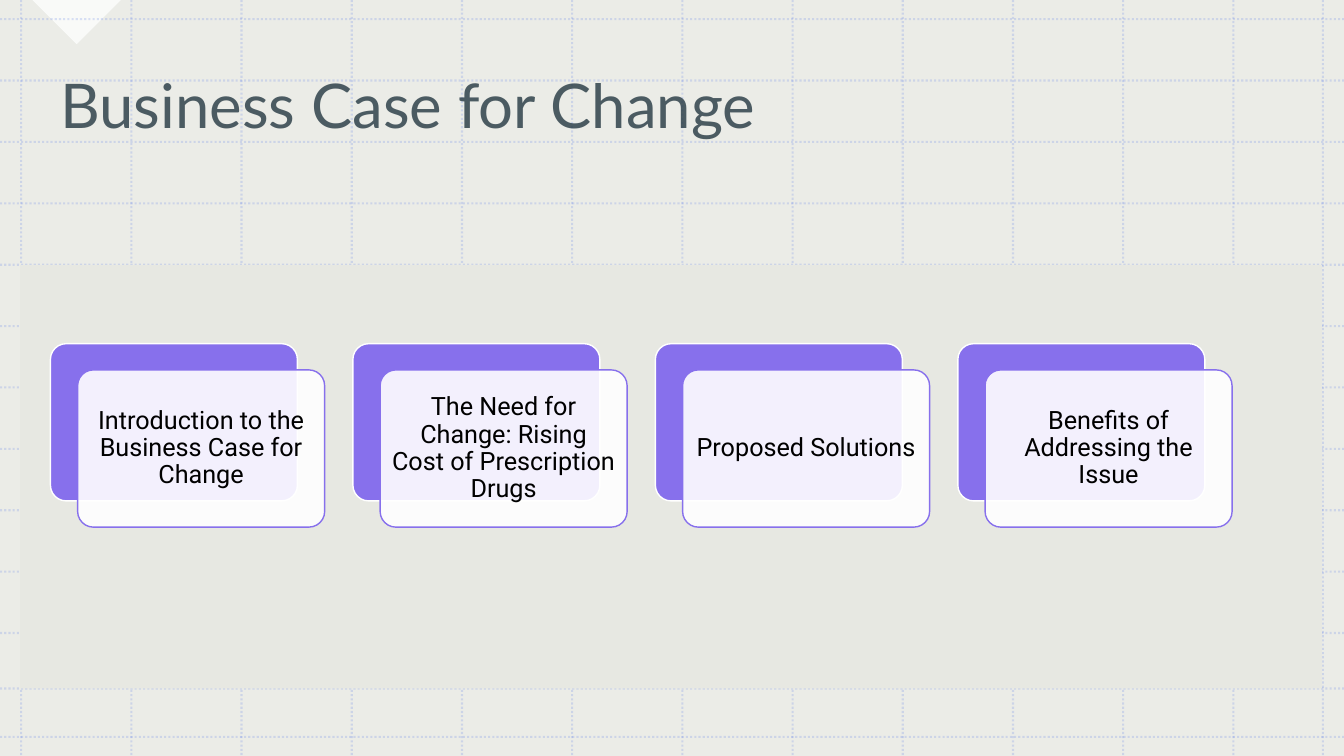
import pptx
import pptx.util
import pptx.dml.color
import pptx.enum.dml
import pptx.enum.shapes
import pptx.enum.text
import pptx.oxml
import pptx.oxml.ns
import lxml.etree

Inches = pptx.util.Inches
SHAPES = pptx.enum.shapes.MSO_SHAPE
ALIGN = pptx.enum.text.PP_ALIGN

# Content
TITLE = "Business Case for Change"
TOPICS = [
    "Introduction to the Business Case for Change",
    "The Need for Change: Rising Cost of Prescription Drugs",
    "Proposed Solutions",
    "Benefits of Addressing the Issue",
]
COLOURS = {
    "white": "FFFFFF",
    "stone": "E7E8E2",
    "grid": "5174E8",
    "title": "243741",
    "violet": "8770EC",
    "black": "000000",
}

# Layout, in inches
WIDTH, HEIGHT = 13.33, 7.5
GRID_COLUMNS = [0.21 + 1.093 * i for i in range(12)] + [13.12]
GRID_ROWS = [0.19 + 0.609 * i for i in range(11)] + [6.83, 7.31]
CARD_LEFT, CARD_TOP, CARD_STEP = 0.5, 3.41, 3.0
CARD_WIDTH, CARD_HEIGHT = 2.45, 1.56
CARD_SHIFT = 0.27
TEXT_MARGIN = 0.045


def paint(colour_format, name, opacity=100):
    """Set a solid colour, with its opacity in percent."""
    colour_format.rgb = pptx.dml.color.RGBColor.from_string(COLOURS[name])


def set_opacity(fill_owner, opacity):
    """Add an alpha value to the first solid colour below an element."""
    if opacity < 100:
        colour = next(fill_owner.iter(pptx.oxml.ns.qn("a:srgbClr")))
        alpha = lxml.etree.SubElement(colour, pptx.oxml.ns.qn("a:alpha"))
        alpha.set("val", str(opacity * 1000))


def add_block(page, kind, left, top, width, height, fill, opacity=100, line=None):
    block = page.shapes.add_shape(
        kind, Inches(left), Inches(top), Inches(width), Inches(height))
    block.shadow.inherit = False
    block.fill.solid()
    paint(block.fill.fore_color, fill)
    set_opacity(block.fill._xPr, opacity)
    if line:
        paint(block.line.color, line)
        block.line.width = pptx.util.Pt(1)
    else:
        block.line.fill.background()
    return block


def add_grid_line(page, x1, y1, x2, y2):
    rule = page.shapes.add_connector(
        pptx.enum.shapes.MSO_CONNECTOR.STRAIGHT,
        Inches(x1), Inches(y1), Inches(x2), Inches(y2))
    paint(rule.line.color, "grid")
    rule.line.width = pptx.util.Pt(1.5)
    rule.line.dash_style = pptx.enum.dml.MSO_LINE.ROUND_DOT
    properties = rule._element.spPr
    set_opacity(properties, 20)
    lxml.etree.SubElement(properties, pptx.oxml.ns.qn("a:effectLst"))


def add_text(page, text, left, top, width, height, font, size, colour,
             align=ALIGN.LEFT, inset=None, opacity=100):
    box = page.shapes.add_textbox(
        Inches(left), Inches(top), Inches(width), Inches(height))
    frame = box.text_frame
    frame.word_wrap = True
    frame.vertical_anchor = pptx.enum.text.MSO_ANCHOR.MIDDLE
    if inset is not None:
        frame.margin_left = frame.margin_right = Inches(inset)
        frame.margin_top = frame.margin_bottom = Inches(inset)
    para = frame.paragraphs[0]
    para.alignment = align
    para.line_spacing = 0.9
    span = para.add_run()
    span.text = text
    span.font.name = font
    span.font.size = pptx.util.Pt(size)
    paint(span.font.color, colour)
    set_opacity(span._r, opacity)


def add_card(page, topic, left):
    front_left, front_top = left + CARD_SHIFT, CARD_TOP + CARD_SHIFT - 0.01
    back = add_block(page, SHAPES.ROUNDED_RECTANGLE, left, CARD_TOP,
                     CARD_WIDTH, CARD_HEIGHT, "violet", line="white")
    front = add_block(page, SHAPES.ROUNDED_RECTANGLE, front_left, front_top,
                      CARD_WIDTH, CARD_HEIGHT, "white", 90, "violet")
    for block in (back, front):
        block.adjustments[0] = 0.1
    add_text(page, topic, front_left + TEXT_MARGIN, front_top + TEXT_MARGIN,
             CARD_WIDTH - 2 * TEXT_MARGIN, CARD_HEIGHT - 2 * TEXT_MARGIN,
             "Roboto", 18, "black", ALIGN.CENTER, 0.07)


def main():
    deck = pptx.Presentation()
    deck.slide_width, deck.slide_height = Inches(WIDTH), Inches(HEIGHT)
    page = deck.slides.add_slide(deck.slide_layouts[6])

    # Tinted backdrop and corner marker
    page.background.fill.solid()
    paint(page.background.fill.fore_color, "white")
    add_block(page, SHAPES.RECTANGLE, 0, 0, WIDTH, HEIGHT, "stone", 80)
    marker = add_block(page, SHAPES.RIGHT_TRIANGLE, 0.45, -0.31, 0.62, 0.62, "white", 75)
    marker.rotation = 315

    # Dotted grid
    for x in GRID_COLUMNS:
        add_grid_line(page, x, 0, x, HEIGHT)
    for y in GRID_ROWS:
        add_grid_line(page, 0, y, WIDTH, y)

    # Title
    add_text(page, TITLE, 0.5, 0.2, 11.75, 1.76, "Lato", 44, "title", opacity=80)

    # Panel with the topic cards
    add_block(page, SHAPES.RECTANGLE, 0.2, 2.63, 12.91, 4.2, "stone")
    for index, topic in enumerate(TOPICS):
        add_card(page, topic, CARD_LEFT + index * CARD_STEP)

    deck.save("out.pptx")


if __name__ == "__main__":
    main()
